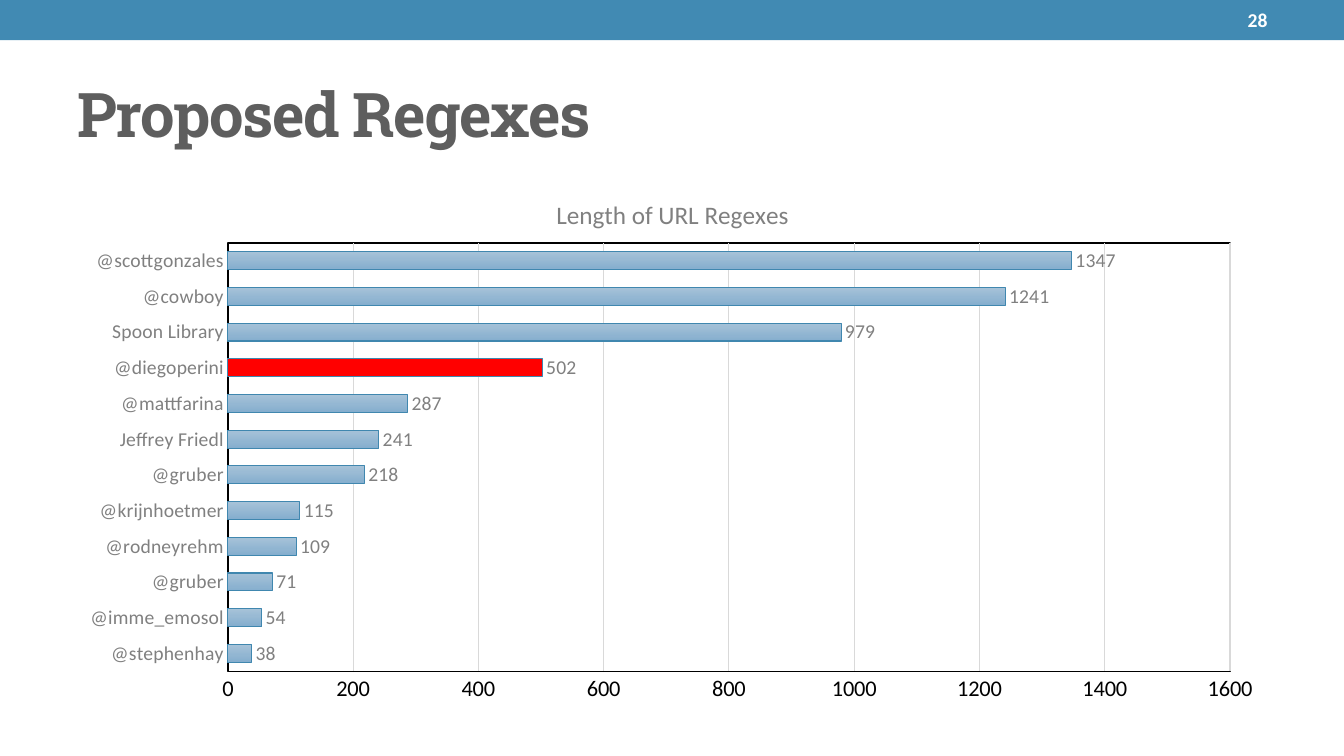
from dataclasses import dataclass

from lxml import etree
from pptx import Presentation
from pptx.chart.data import CategoryChartData
from pptx.dml.color import RGBColor
from pptx.enum.chart import XL_CHART_TYPE, XL_LABEL_POSITION, XL_TICK_MARK
from pptx.enum.shapes import MSO_SHAPE
from pptx.enum.text import MSO_ANCHOR, PP_ALIGN
from pptx.oxml import parse_xml
from pptx.oxml.ns import nsdecls, qn
from pptx.util import Inches, Pt

BAR_CLUSTERED = XL_CHART_TYPE.BAR_CLUSTERED
OUTSIDE_END = XL_LABEL_POSITION.OUTSIDE_END
NO_TICKS = XL_TICK_MARK.NONE
RECTANGLE = MSO_SHAPE.RECTANGLE
MIDDLE = MSO_ANCHOR.MIDDLE
LEFT, RIGHT = PP_ALIGN.LEFT, PP_ALIGN.RIGHT


@dataclass(frozen=True)
class Theme:
    heading_font: str = "Roboto Slab"
    body_font: str = "Calibri"
    banner: str = "418AB3"
    heading: str = "5E5E5E"
    muted: str = "808080"
    grid: str = "D9D9D9"
    black: str = "000000"
    white: str = "FFFFFF"
    bar_top: str = "A6C2D8"
    bar_bottom: str = "85AECE"
    bar_outline: str = "4087AF"
    highlight: str = "FF0000"
    heading_size: int = 44
    chart_title_size: int = 18
    scale_size: int = 16
    small_size: int = 14


@dataclass(frozen=True)
class Box:
    left: float
    top: float
    width: float
    height: float

    def lengths(self) -> tuple:
        return tuple(Inches(v) for v in (self.left, self.top, self.width, self.height))


@dataclass(frozen=True)
class Regex:
    author: str
    length: int
    highlighted: bool = False


THEME = Theme()
SLIDE_WIDTH, SLIDE_HEIGHT = 13.33, 7.5
CHART_BOX = Box(0.67, 1.75, 12, 5.33)
PLOT_BOX = Box(2.26, 2.41, 9.94, 4.25)

# Listed from the bottom bar upwards
REGEXES = [
    Regex("@stephenhay", 38),
    Regex("@imme_emosol", 54),
    Regex("@gruber", 71),
    Regex("@rodneyrehm", 109),
    Regex("@krijnhoetmer", 115),
    Regex("@gruber", 218),
    Regex("Jeffrey Friedl", 241),
    Regex("@mattfarina", 287),
    Regex("@diegoperini", 502, highlighted=True),
    Regex("Spoon Library", 979),
    Regex("@cowboy", 1241),
    Regex("@scottgonzales", 1347),
]


def rgb(colour: str) -> RGBColor:
    return RGBColor.from_string(colour)


def style_font(font, size: int, colour: str, name: str = THEME.body_font,
               bold: bool = False) -> None:
    font.name, font.size, font.bold = name, Pt(size), bold
    font.color.rgb = rgb(colour)


def style_line(line, colour: str, width: float) -> None:
    line.color.rgb = rgb(colour)
    line.width = Pt(width)


def add_text(slide, text: str, box: Box, *, size: int, colour: str, font: str,
             align=LEFT, spacing: float = 0) -> None:
    frame = slide.shapes.add_textbox(*box.lengths()).text_frame
    frame.word_wrap = True
    frame.vertical_anchor = MIDDLE
    paragraph = frame.paragraphs[0]
    paragraph.alignment = align
    run = paragraph.add_run()
    run.text = text
    style_font(run.font, size, colour, font, bold=True)
    if spacing:
        run._r.get_or_add_rPr().set("spc", str(round(spacing * 100)))


def add_banner(slide) -> None:
    banner = slide.shapes.add_shape(RECTANGLE, *Box(0, 0, SLIDE_WIDTH, 0.4).lengths())
    banner.shadow.inherit = False
    banner.fill.solid()
    banner.fill.fore_color.rgb = rgb(THEME.banner)
    banner.line.fill.background()


def frame_plot(chart) -> None:
    """Fix the inner plot rectangle and give it a black outline."""
    plot_area = chart._chartSpace.chart.plotArea
    for layout in plot_area.findall(qn("c:layout")):
        plot_area.remove(layout)
    layout = parse_xml(f"<c:layout {nsdecls('c')}><c:manualLayout/></c:layout>")
    settings = {
        "layoutTarget": "inner", "xMode": "edge", "yMode": "edge",
        "x": (PLOT_BOX.left - CHART_BOX.left) / CHART_BOX.width,
        "y": (PLOT_BOX.top - CHART_BOX.top) / CHART_BOX.height,
        "w": PLOT_BOX.width / CHART_BOX.width,
        "h": PLOT_BOX.height / CHART_BOX.height,
    }
    for tag, value in settings.items():
        etree.SubElement(layout[0], qn(f"c:{tag}")).set("val", str(value))
    plot_area.insert(0, layout)
    plot_area.append(parse_xml(
        f'<c:spPr {nsdecls("c", "a")}><a:noFill/><a:ln w="{Pt(1)}"><a:solidFill>'
        f'<a:srgbClr val="{THEME.black}"/></a:solidFill></a:ln></c:spPr>'))


def style_axes(chart) -> None:
    authors, lengths = chart.category_axis, chart.value_axis
    for axis in (authors, lengths):
        axis.major_tick_mark = axis.minor_tick_mark = NO_TICKS
    style_font(authors.tick_labels.font, THEME.small_size, THEME.muted)
    style_line(authors.format.line, THEME.black, 1)
    style_font(lengths.tick_labels.font, THEME.scale_size, THEME.black)
    lengths.format.line.fill.background()
    lengths.minimum_scale, lengths.maximum_scale, lengths.major_unit = 0, 1600, 200
    lengths.has_major_gridlines = True
    style_line(lengths.major_gridlines.format.line, THEME.grid, 0.75)


def style_bars(chart) -> None:
    plot = chart.plots[0]
    plot.gap_width = 100
    plot.vary_by_categories = False
    bars = plot.series[0]
    fill = bars.format.fill
    fill.gradient()
    fill.gradient_angle = 270
    for stop, colour in zip(fill.gradient_stops, (THEME.bar_top, THEME.bar_bottom)):
        stop.color.rgb = rgb(colour)
    style_line(bars.format.line, THEME.bar_outline, 0.75)
    for index, regex in enumerate(REGEXES):
        if regex.highlighted:
            bar = bars.points[index].format
            bar.fill.solid()
            bar.fill.fore_color.rgb = rgb(THEME.highlight)
            style_line(bar.line, THEME.bar_outline, 0.75)
    labels = bars.data_labels
    labels.show_value = True
    labels.position = OUTSIDE_END
    style_font(labels.font, THEME.small_size, THEME.muted)


def add_length_chart(slide) -> None:
    data = CategoryChartData()
    data.categories = [regex.author for regex in REGEXES]
    data.add_series("Series 1", [regex.length for regex in REGEXES])
    chart = slide.shapes.add_chart(BAR_CLUSTERED, *CHART_BOX.lengths(), data).chart
    style_font(chart.font, 10, THEME.black)
    chart.has_legend = False
    chart.has_title = True
    heading = chart.chart_title.text_frame
    heading.text = "Length of URL Regexes"
    style_font(heading.paragraphs[0].runs[0].font, THEME.chart_title_size, THEME.muted)
    style_axes(chart)
    style_bars(chart)
    frame_plot(chart)


def main() -> None:
    deck = Presentation()
    deck.slide_width, deck.slide_height = Inches(SLIDE_WIDTH), Inches(SLIDE_HEIGHT)
    slide = deck.slides.add_slide(deck.slide_layouts[6])

    # Banner and heading
    add_banner(slide)
    add_text(slide, "Proposed Regexes", Box(0.67, 0.58, 12, 1.08), size=THEME.heading_size,
             colour=THEME.heading, font=THEME.heading_font, spacing=-1)

    # Bar chart
    add_length_chart(slide)

    # Page number
    add_text(slide, "28", Box(11.11, 0.02, 1.56, 0.36), size=THEME.small_size,
             colour=THEME.white, font=THEME.body_font, align=RIGHT)
    deck.save("out.pptx")


if __name__ == "__main__":
    main()
